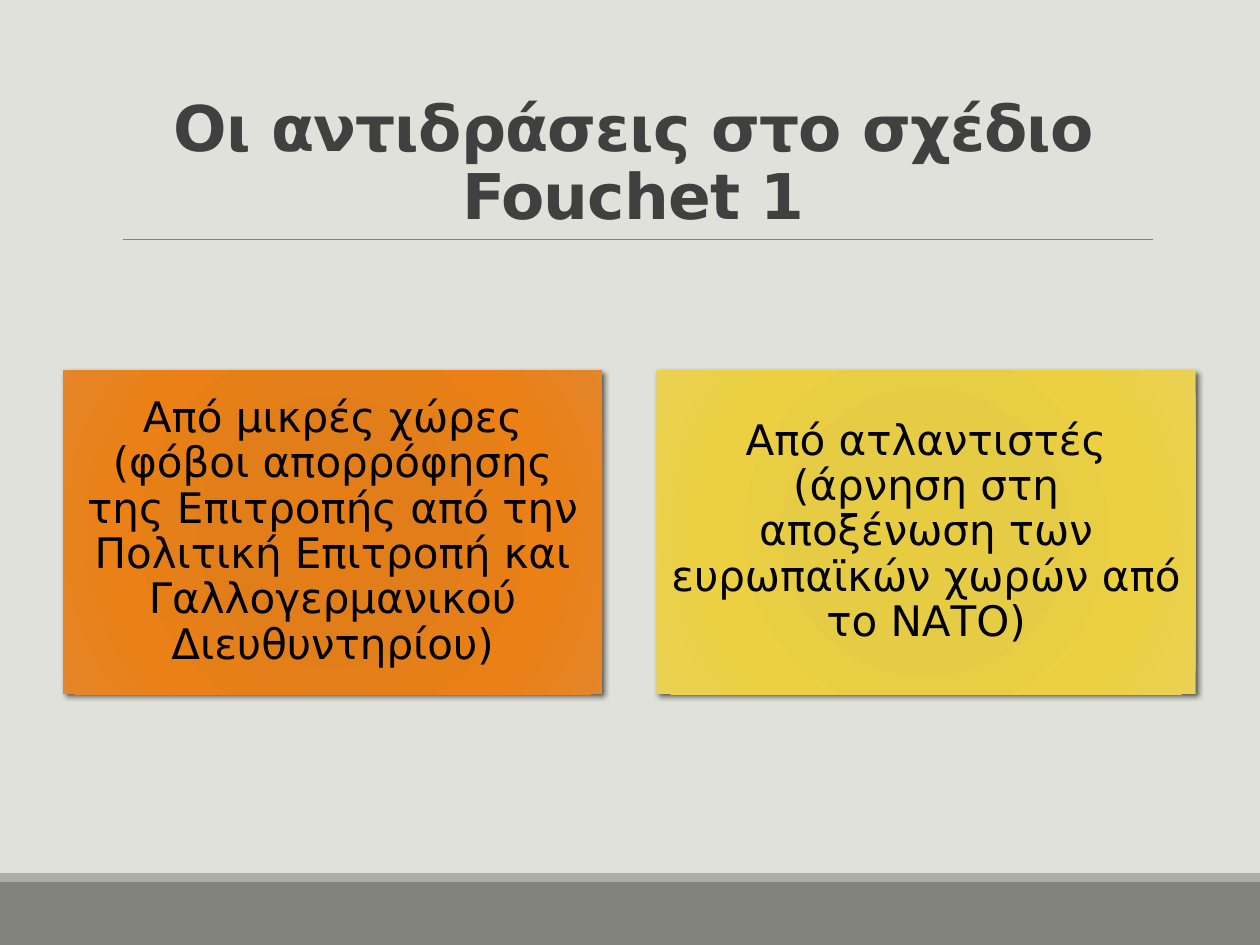
from pptx import Presentation
from pptx.dml.color import RGBColor
from pptx.enum.shapes import MSO_CONNECTOR, MSO_SHAPE
from pptx.enum.text import MSO_ANCHOR, PP_ALIGN
from pptx.oxml import parse_xml
from pptx.oxml.ns import nsdecls, qn
from pptx.util import Inches, Pt
from lxml.etree import SubElement

BACKGROUND = RGBColor(0xE1, 0xE1, 0xDB)
FOOTER = RGBColor(0x82, 0x84, 0x7C)
FOOTER_EDGE = RGBColor(0xAC, 0xAD, 0xA8)
RULE = RGBColor(0x80, 0x80, 0x80)
TITLE = RGBColor(0x40, 0x40, 0x40)
BLACK = RGBColor(0, 0, 0)
ORANGE = [RGBColor(0xE4, 0x7D, 0x16), RGBColor(0xE2, 0x7E, 0x1A),
          RGBColor(0xEA, 0x80, 0x16), RGBColor(0xE4, 0x86, 0x29)]
YELLOW = [RGBColor(0xE7, 0xCB, 0x41), RGBColor(0xE6, 0xCB, 0x45),
          RGBColor(0xEC, 0xD0, 0x42), RGBColor(0xEA, 0xD1, 0x53)]
GRADIENT_STOPS = [0, 34, 70, 100]

FONT = "DejaVu Sans"
CARD_LEFT, CARD_TOP = 0.5, 2.94
CARD_WIDTH, CARD_HEIGHT = 4.28, 2.57
CARD_PITCH = 4.71
CARDS = [
    ("Από μικρές χώρες (φόβοι απορρόφησης της Επιτροπής από την "
     "Πολιτική Επιτροπή και Γαλλογερμανικού Διευθυντηρίου)", ORANGE),
    ("Από ατλαντιστές (άρνηση στη αποξένωση των ευρωπαϊκών χωρών "
     "από το ΝΑΤΟ)", YELLOW),
]
CARD_FRAME = {"vertical_anchor": MSO_ANCHOR.MIDDLE,
              "margin_left": Inches(0.1), "margin_right": Inches(0.1),
              "margin_top": Inches(0.1), "margin_bottom": Inches(0.1)}


def apply_format(target, values):
    for name, value in values.items():
        setattr(target, name, value)


def write_text(frame, text, size, color, bold=False, space_after=0, **frame_format):
    """Fill the frame with one centred paragraph and return its run."""
    apply_format(frame, {"word_wrap": True, **frame_format})
    paragraph = frame.paragraphs[0]
    apply_format(paragraph, {"alignment": PP_ALIGN.CENTER, "line_spacing": 0.9,
                             "space_after": Pt(space_after)})
    run = paragraph.add_run()
    run.text = text
    apply_format(run.font, {"name": FONT, "size": Pt(size), "bold": bold})
    run.font.color.rgb = color
    return run


def add_rectangle(slide, left, top, width, height):
    rectangle = slide.shapes.add_shape(
        MSO_SHAPE.RECTANGLE, Inches(left), Inches(top), Inches(width), Inches(height))
    rectangle.shadow.inherit = False
    rectangle.line.fill.background()
    return rectangle


def add_band(slide, top, height, color):
    band = add_rectangle(slide, 0, top, 10, height)
    band.fill.solid()
    band.fill.fore_color.rgb = color


def add_title(slide, text):
    title = slide.shapes.add_textbox(
        Inches(0.9), Inches(0.31), Inches(8.25), Inches(1.59))
    run = write_text(title.text_frame, text, 36, TITLE, bold=True,
                     vertical_anchor=MSO_ANCHOR.BOTTOM)
    run.font._element.set("spc", "-50")


def add_title_rule(slide):
    rule = slide.shapes.add_connector(
        MSO_CONNECTOR.STRAIGHT, Inches(0.98), Inches(1.9), Inches(9.15), Inches(1.9))
    rule.line.color.rgb = RULE
    rule.line.width = Pt(0.5)
    SubElement(rule._element.spPr, qn("a:effectLst"))


def set_radial_fill(shape, colors):
    stops = "".join(
        f'<a:gs pos="{stop * 1000}"><a:srgbClr val="{color}"/></a:gs>'
        for stop, color in zip(GRADIENT_STOPS, colors))
    radial = parse_xml(
        f'<a:gradFill {nsdecls("a")} rotWithShape="1"><a:gsLst>{stops}</a:gsLst>'
        '<a:path path="circle"><a:fillToRect l="100000" t="100000" r="100000" '
        'b="100000"/></a:path></a:gradFill>')
    shape.fill.gradient()
    properties = shape._element.spPr
    properties.replace(properties.find(qn("a:gradFill")), radial)


def add_soft_shadow(shape):
    effects = shape._element.spPr.find(qn("a:effectLst"))
    effects.append(parse_xml(
        f'<a:outerShdw {nsdecls("a")} blurRad="{Pt(3)}" dist="{Pt(2)}" dir="2700000" '
        'algn="ctr" rotWithShape="0"><a:srgbClr val="000000"><a:alpha val="60000"/>'
        '</a:srgbClr></a:outerShdw>'))


def add_card(slide, left, text, colors):
    card = add_rectangle(slide, left, CARD_TOP, CARD_WIDTH, CARD_HEIGHT)
    set_radial_fill(card, colors)
    add_soft_shadow(card)
    write_text(card.text_frame, text, 24, BLACK, space_after=8.4, **CARD_FRAME)


def main():
    presentation = Presentation()
    apply_format(presentation, {"slide_width": Inches(10), "slide_height": Inches(7.5)})
    slide = presentation.slides.add_slide(presentation.slide_layouts[6])
    slide.background.fill.solid()
    slide.background.fill.fore_color.rgb = BACKGROUND

    add_band(slide, 7, 0.5, FOOTER)
    add_band(slide, 6.93, 0.07, FOOTER_EDGE)
    add_title_rule(slide)
    add_title(slide, "Οι αντιδράσεις στο σχέδιο Fouchet 1")
    for index, (reaction, colors) in enumerate(CARDS):
        add_card(slide, CARD_LEFT + index * CARD_PITCH, reaction, colors)

    presentation.save("out.pptx")


if __name__ == "__main__":
    main()
